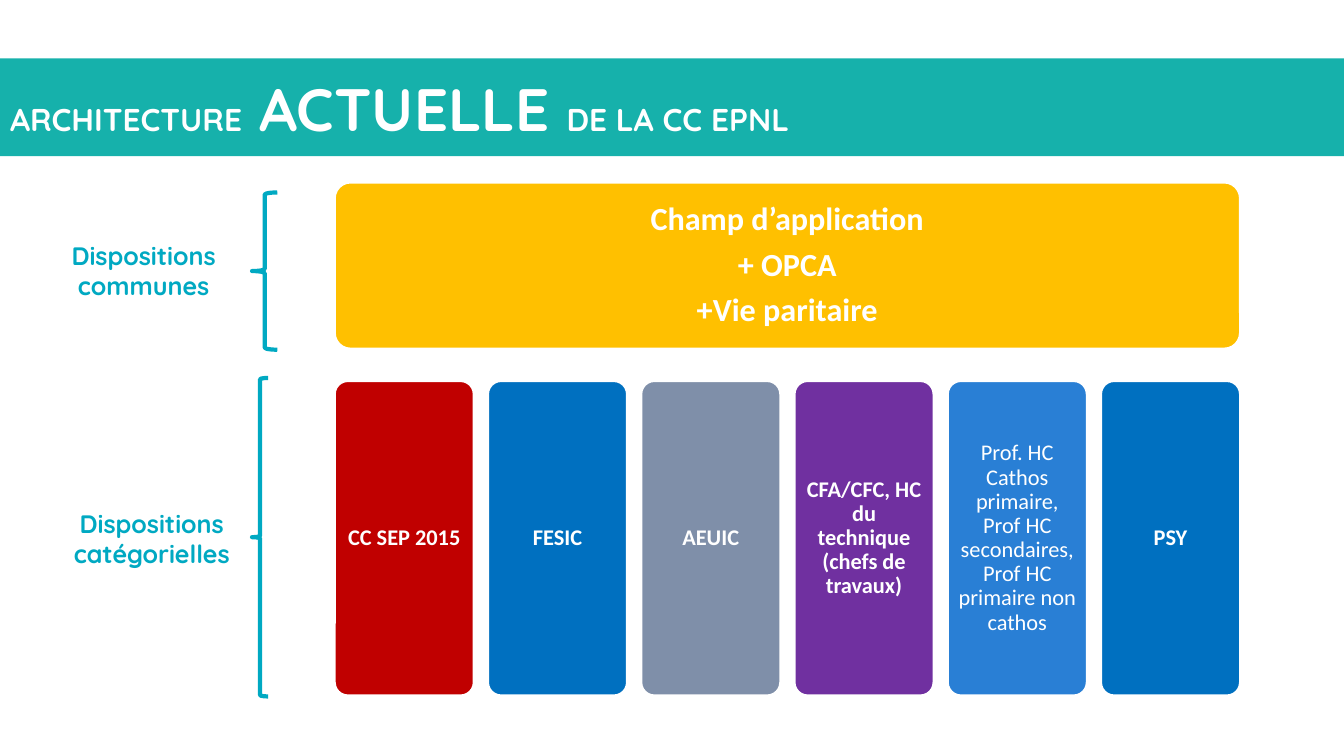
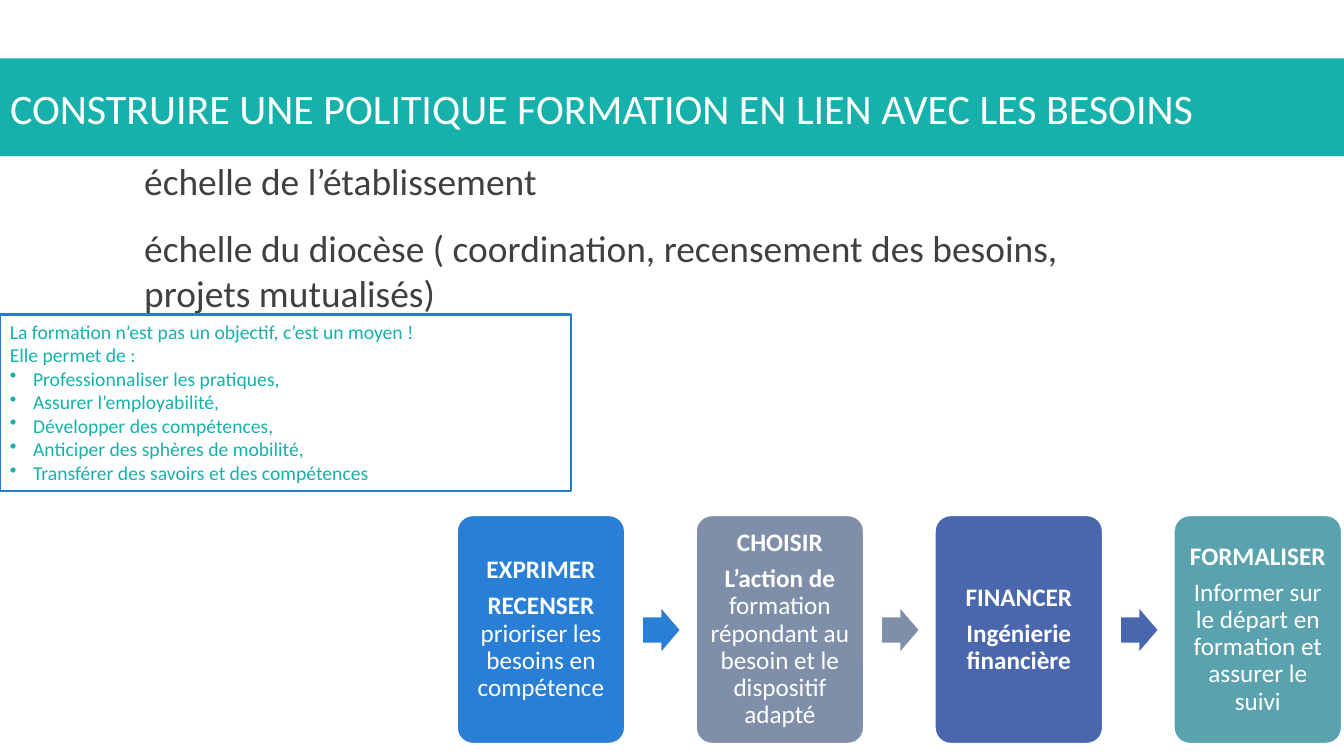
from dataclasses import dataclass

from lxml import etree
from pptx import Presentation
from pptx.dml.color import RGBColor
from pptx.enum.shapes import MSO_SHAPE
from pptx.enum.text import MSO_ANCHOR, MSO_AUTO_SIZE, PP_ALIGN
from pptx.oxml.ns import qn
from pptx.util import Pt

PX = 9144  # one px is a hundredth of an inch
WIDTH, HEIGHT = 1333, 750

RECT = MSO_SHAPE.RECTANGLE
ROUND = MSO_SHAPE.ROUNDED_RECTANGLE
ARROW = MSO_SHAPE.RIGHT_ARROW
BRACE = MSO_SHAPE.LEFT_BRACE
LEFT, CENTER = PP_ALIGN.LEFT, PP_ALIGN.CENTER
TOP, MIDDLE = MSO_ANCHOR.TOP, MSO_ANCHOR.MIDDLE
FIXED = MSO_AUTO_SIZE.NONE


@dataclass(frozen=True)
class Theme:
    sans: str = "Calibri"
    display: str = "Quicksand"
    white: str = "FFFFFF"
    teal: str = "16B1AB"
    cyan: str = "00A9C2"
    dark: str = "404040"
    frame: str = "247CD5"
    gold: str = "FFC000"
    red: str = "C00000"
    blue: str = "0070C0"
    sky: str = "297FD5"
    slate: str = "7F8FA9"
    purple: str = "7030A0"
    indigo: str = "4A66AC"
    sea: str = "5AA2AE"
    big: float = 42.7
    title: float = 30
    small: float = 22.5
    body: float = 26.7
    scope: float = 23
    step: float = 18
    label: float = 18
    branch: float = 16
    note: float = 14


T = Theme()
PLAIN = {"bold": False}


def px(*values):
    return [value * PX for value in values]


def set_font(font, name, size, color, bold=False):
    font.name, font.size, font.bold = name, Pt(size), bold
    font.color.rgb = RGBColor.from_string(color)


def set_bullet(para, char, left, hang):
    """Set the indents of a paragraph and its bullet; no char means none."""
    props = para._p.get_or_add_pPr()
    props.set("marL", str(left * PX))
    props.set("indent", str(-hang * PX))
    if char:
        etree.SubElement(props, qn("a:buChar")).set("char", char)
    else:
        etree.SubElement(props, qn("a:buNone"))


def set_frame(frame, anchor=TOP, inset=None):
    frame.word_wrap = True
    frame.auto_size = FIXED
    frame.vertical_anchor = anchor
    if inset is not None:
        frame.margin_left = frame.margin_right = inset * PX
        frame.margin_top = frame.margin_bottom = inset * PX


def add_paras(frame, paras, font, align=LEFT):
    """Fill a frame; each paragraph is a string or a list of (text, changes)."""
    for i, parts in enumerate(paras):
        para = frame.paragraphs[0] if i == 0 else frame.add_paragraph()
        para.alignment = align
        if isinstance(parts, str):
            parts = [(parts, {})]
        alone = len(parts) == 1
        set_font(para.font, *font)
        for text, changes in parts:
            run = para.add_run()
            run.text = text
            target = para.font if alone else run.font
            for key, value in changes.items():
                setattr(target, key, value)
    return frame.paragraphs


def add_shape(slide, kind, box, fill=None, line=None, weight=3):
    shape = slide.shapes.add_shape(kind, *px(*box))
    shape.shadow.inherit = False
    if fill:
        shape.fill.solid()
        shape.fill.fore_color.rgb = RGBColor.from_string(fill)
    else:
        shape.fill.background()
    if line:
        shape.line.color.rgb = RGBColor.from_string(line)
        shape.line.width = Pt(weight)
    else:
        shape.line.fill.background()
    return shape


def add_card(slide, box, fill, paras, size, bold=True, inset=7):
    card = add_shape(slide, ROUND, box, fill, T.white)
    card.adjustments[0] = 0.1
    set_frame(card.text_frame, MIDDLE, inset)
    font = (T.sans, size, T.white, bold)
    for para in add_paras(card.text_frame, paras, font, CENTER):
        para.line_spacing = 0.9
        para.space_after = Pt(round(0.35 * size, 1))


def add_label(slide, box, text):
    label = slide.shapes.add_textbox(*px(*box))
    set_frame(label.text_frame)
    font = (T.display, T.label, T.cyan, True)
    add_paras(label.text_frame, [text], font, CENTER)


def place(holder, box):
    holder.left, holder.top, holder.width, holder.height = px(*box)


def add_slide(deck, layout, title, font):
    """Add a slide with the teal band behind its title."""
    slide = deck.slides.add_slide(deck.slide_layouts[layout])
    holder = slide.shapes.title
    band = add_shape(slide, RECT, (0, 58, WIDTH, 97), T.teal)
    holder._element.addprevious(band._element)
    place(holder, (0, 59, WIDTH, 95))
    set_frame(holder.text_frame, MIDDLE)
    add_paras(holder.text_frame, [title], font)
    return slide


def add_scheme(deck):
    small, big = {"size": Pt(T.small)}, {"size": Pt(T.big)}
    title = [("ARCHITECTURE", small), (" ACTUELLE ", big),
             ("DE LA CC EPNL", small)]
    slide = add_slide(deck, 5, title, (T.display, T.small, T.white, True))
    scope = ["Champ d’application", "+ OPCA", "+Vie paritaire"]
    add_card(slide, (331, 180, 900, 167), T.gold, scope, T.scope, inset=10)
    branches = [
        (T.red, "CC SEP 2015", True),
        (T.blue, "FESIC", True),
        (T.slate, "AEUIC", True),
        (T.purple, "CFA/CFC, HC du technique (chefs de travaux)", True),
        (T.sky, "Prof. HC Cathos primaire, Prof HC secondaires, "
                "Prof HC primaire non cathos", False),
        (T.blue, "PSY", True),
    ]
    for i, (fill, text, bold) in enumerate(branches):
        box = (331 + 152 * i, 377, 140, 314)
        add_card(slide, box, fill, [text], T.branch, bold)
    for box in ((250, 191, 25, 156), (250, 375, 16, 316)):
        add_shape(slide, BRACE, box, line=T.cyan)
    add_label(slide, (52, 233, 181, 71), "Dispositions communes")
    add_label(slide, (60, 499, 181, 71), "Dispositions catégorielles")


def add_scales(slide):
    body = slide.placeholders[1]
    place(body, (0, 152, 1150, 476))
    set_frame(body.text_frame)
    texts = ["échelle de l’établissement",
             "échelle du diocèse ( coordination, recensement des besoins, "
             "projets mutualisés)"]
    paras = add_paras(body.text_frame, texts, (T.sans, T.body, T.dark))
    for i, para in enumerate(paras):
        para.level = 2
        para.space_before = Pt(16 if i else 0)
        set_bullet(para, None, 133, 0)
        # the bullet element must come before the font defaults
        props = para._p.pPr
        props.append(props.find(qn("a:defRPr")))


def add_note(slide):
    note = add_shape(slide, RECT, (0, 312, 566, 175), line=T.frame, weight=1.5)
    set_frame(note.text_frame)
    texts = ["La formation n’est pas un objectif, c’est un moyen !",
             "Elle permet de :",
             "Professionnaliser les pratiques,",
             "Assurer l’employabilité,",
             "Développer des compétences,",
             "Anticiper des sphères de mobilité,",
             "Transférer des savoirs et des compétences"]
    paras = add_paras(note.text_frame, texts, (T.sans, T.note, T.teal))
    for para in paras[2:]:
        set_bullet(para, "•", 23, 23)
        props = para._p.pPr
        props.append(props.find(qn("a:defRPr")))


def add_policy(deck):
    title = "CONSTRUIRE UNE POLITIQUE FORMATION EN LIEN AVEC LES BESOINS"
    slide = add_slide(deck, 1, title, (T.sans, T.title, T.white))
    add_scales(slide)
    steps = [
        (T.sky, ["EXPRIMER", [
            ("RECENSER", {}),
            (" prioriser les besoins en compétence", PLAIN)]]),
        (T.slate, ["CHOISIR", [
            ("L’action de ", {}),
            ("formation répondant au besoin et le dispositif adapté",
             PLAIN)]]),
        (T.indigo, ["FINANCER", "Ingénierie financière"]),
        (T.sea, ["FORMALISER", [
            ("Informer sur le départ en formation et assurer le suivi",
             PLAIN)]]),
    ]
    for i, (fill, paras) in enumerate(steps):
        left = 452 + 237 * i
        add_card(slide, (left, 510, 169, 229), fill, paras, T.step)
        if i < len(steps) - 1:
            arrow = add_shape(slide, ARROW, (left + 186, 604, 36, 42), fill)
            arrow.adjustments[0] = 0.6
            arrow.adjustments[1] = 0.5
    add_note(slide)


def main():
    deck = Presentation()
    deck.slide_width, deck.slide_height = px(WIDTH, HEIGHT)
    add_scheme(deck)
    add_policy(deck)
    deck.save("out.pptx")


if __name__ == "__main__":
    main()
